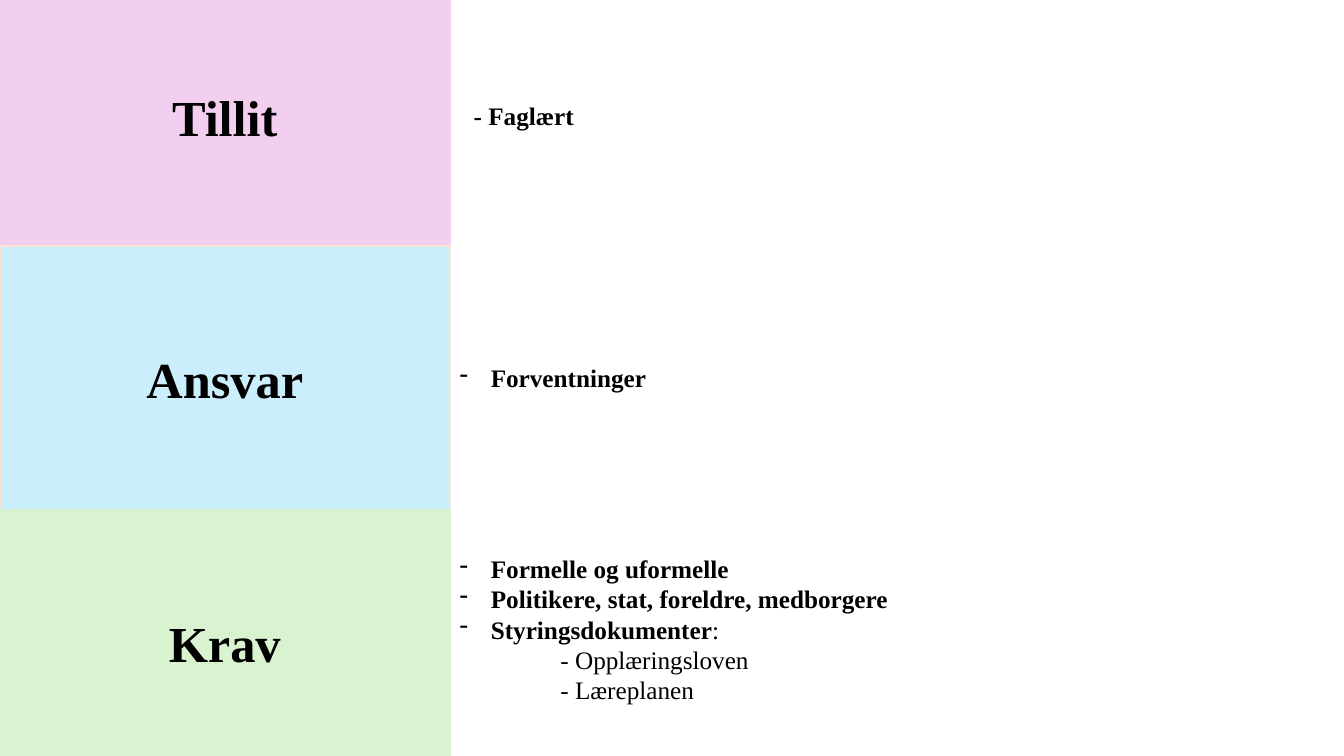
"""Build a slide with three coloured bands and notes on trust, duty and demands."""
from lxml import etree
from pptx import Presentation
from pptx.dml.color import RGBColor
from pptx.enum.shapes import MSO_SHAPE
from pptx.enum.text import MSO_ANCHOR, MSO_AUTO_SIZE, PP_ALIGN
from pptx.oxml.ns import qn
from pptx.util import Inches, Pt

RECT = MSO_SHAPE.RECTANGLE
MIDDLE = MSO_ANCHOR.MIDDLE
GROW = MSO_AUTO_SIZE.SHAPE_TO_FIT_TEXT
CENTER = PP_ALIGN.CENTER

FONT = "Times New Roman"
COLORS = {"pink": "F2CFEE", "blue": "CAEEFB", "peach": "FBE3D6",
          "green": "D9F2D0", "black": "000000"}
BAND_W, BAND_H = 4.46, 2.62
HANG, SUB = 0.31, 1

BANDS = [
    ("Tillit", -0.16, "pink", "pink"),
    ("Ansvar", 2.44, "blue", "peach"),
    ("Krav", 5.06, "green", "green"),
]
NOTES = [
    ((BAND_W, 5.44, 5.02, 1.92), [
        ("bullet", [("Formelle og uformelle", True)]),
        ("bullet", [("Politikere, stat, foreldre, medborgere", True)]),
        ("bullet", [("Styringsdokumenter", True), (":", False)]),
        ("sub", [("- Opplæringsloven", False)]),
        ("sub", [("- Læreplanen", False)]),
    ]),
    ((BAND_W, 3.55, 3.5, 0.4), [("bullet", [("Forventninger", True)])]),
    ((4.6, 0.95, 3.5, 0.4), [("plain", [("- Faglært", True)])]),
]


def color(name):
    return RGBColor.from_string(COLORS[name])


def style(run, size, bold):
    font = run.font
    font.name, font.size, font.bold = FONT, Pt(size), bold
    font.color.rgb = color("black")


def indent(para, kind):
    props = para._p.get_or_add_pPr()
    if kind == "bullet":
        props.set("marL", str(Inches(HANG)))
        props.set("indent", str(-Inches(HANG)))
        etree.SubElement(props, qn("a:buFontTx"))
        etree.SubElement(props, qn("a:buChar")).set("char", "-")
    elif kind == "sub":
        props.set("marL", str(Inches(SUB)))


def add_band(slide, label, top, fill, edge):
    band = slide.shapes.add_shape(RECT, 0, Inches(top), Inches(BAND_W), Inches(BAND_H))
    band.shadow.inherit = False
    band.fill.solid()
    band.fill.fore_color.rgb = color(fill)
    band.line.color.rgb = color(edge)
    band.line.width = Pt(1.5)
    frame = band.text_frame
    frame.text = label
    frame.vertical_anchor = MIDDLE
    para = frame.paragraphs[0]
    para.alignment = CENTER
    style(para.runs[0], 36, True)


def add_note(slide, place, lines):
    frame = slide.shapes.add_textbox(*map(Inches, place)).text_frame
    frame.word_wrap = True
    frame.auto_size = GROW
    for i, (kind, parts) in enumerate(lines):
        para = frame.add_paragraph() if i else frame.paragraphs[0]
        indent(para, kind)
        for text, bold in parts:
            run = para.add_run()
            run.text = text
            style(run, 18, bold)


def main():
    deck = Presentation()
    deck.slide_width, deck.slide_height = Inches(13.33), Inches(7.5)
    slide = deck.slides.add_slide(deck.slide_layouts[6])
    for band in BANDS:
        add_band(slide, *band)
    for note in NOTES:
        add_note(slide, *note)
    deck.save("out.pptx")


if __name__ == "__main__":
    main()
